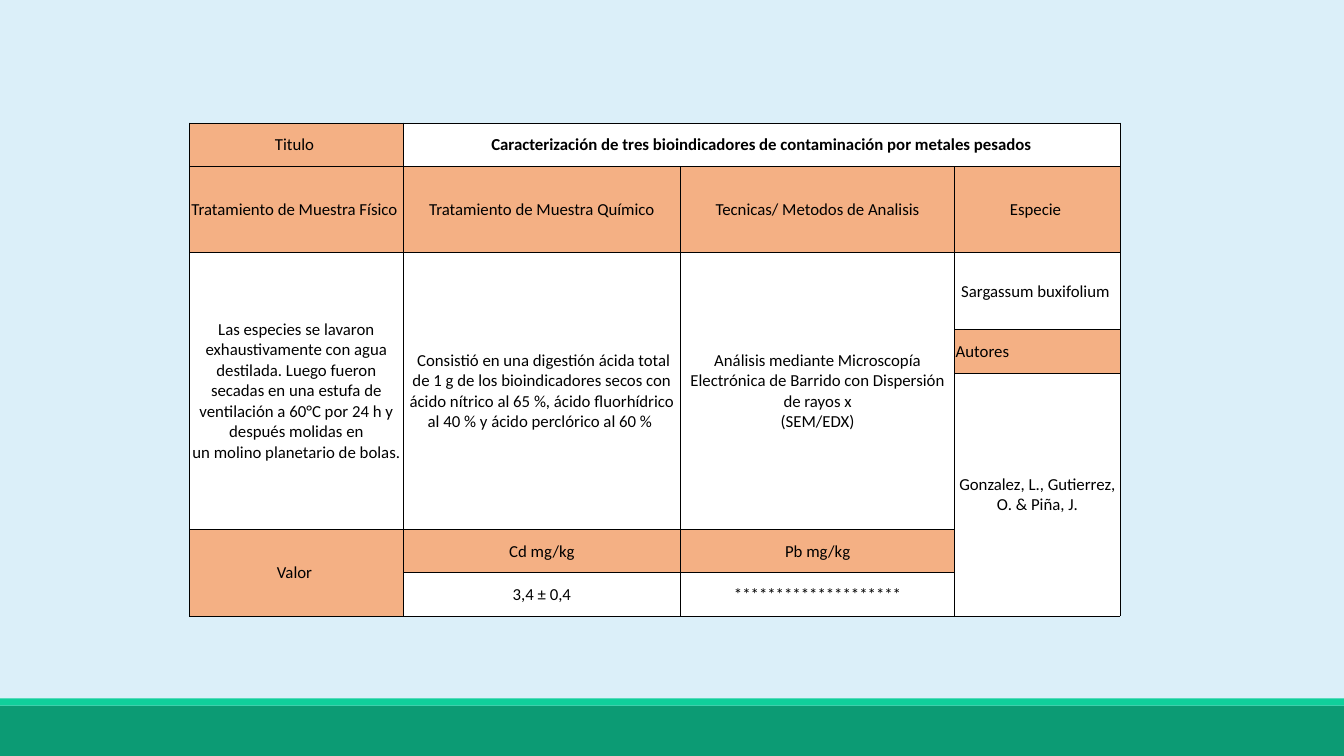
from lxml.etree import SubElement
from pptx import Presentation
from pptx.dml.color import RGBColor
from pptx.enum.shapes import MSO_SHAPE
from pptx.enum.text import MSO_ANCHOR, PP_ALIGN
from pptx.oxml.ns import qn
from pptx.util import Inches, Pt

SKY = RGBColor(0xDB, 0xEF, 0xF9)
GREEN = RGBColor(0x0C, 0x9B, 0x74)
MINT = RGBColor(0x10, 0xCF, 0x9B)
ORANGE = RGBColor(0xF4, 0xB0, 0x84)
WHITE = RGBColor(0xFF, 0xFF, 0xFF)
BLACK = RGBColor(0, 0, 0)


def add_borders(cell):
    """Give the cell a thin black line on all four sides."""
    properties = cell._tc.get_or_add_tcPr()
    for position, side in enumerate(("lnL", "lnR", "lnT", "lnB")):
        line = SubElement(properties, qn(f"a:{side}"), w=str(Pt(0.5)))
        fill = SubElement(line, qn("a:solidFill"))
        SubElement(fill, qn("a:srgbClr"), val=str(BLACK))
        properties.insert(position, line)


def write_cell(cell, text, bold=False, align=PP_ALIGN.CENTER):
    cell.vertical_anchor = MSO_ANCHOR.MIDDLE
    cell.margin_left = cell.margin_right = cell.margin_top = Inches(0.01)
    cell.margin_bottom = 0
    para = cell.text_frame.paragraphs[0]
    para.text = text
    para.alignment = align
    for span in para.runs:
        span.font.name = "Calibri"
        span.font.size = Pt(12)
        span.font.bold = bold
        span.font.color.rgb = BLACK
    for line_break in para._p.findall(qn("a:br")):
        SubElement(line_break, qn("a:rPr"), sz="1200")


deck = Presentation()
deck.slide_width = Inches(13.33)
deck.slide_height = Inches(7.5)
page = deck.slides.add_slide(deck.slide_layouts[6])
page.background.fill.solid()
page.background.fill.fore_color.rgb = SKY

for top, height, color in ((7, 0.5, GREEN), (6.93, 0.07, MINT)):
    band = page.shapes.add_shape(
        MSO_SHAPE.RECTANGLE, 0, Inches(top), deck.slide_width, Inches(height))
    band.shadow.inherit = False
    band.fill.solid()
    band.fill.fore_color.rgb = color
    band.line.fill.background()

column_widths = (2.12, 2.75, 2.72, 1.64)
row_heights = (0.43, 0.85, 0.77, 0.43, 1.55, 0.43, 0.43)
table = page.shapes.add_table(
    len(row_heights), len(column_widths), Inches(1.88), Inches(1.22),
    Inches(sum(column_widths)), Inches(sum(row_heights))).table
for column, width in zip(table.columns, column_widths):
    column.width = Inches(width)
for row, height in zip(table.rows, row_heights):
    row.height = Inches(height)

headings = {
    (0, 0): "Titulo ",
    (1, 0): "Tratamiento de Muestra Físico ",
    (1, 1): "Tratamiento de Muestra Químico",
    (1, 2): "Tecnicas/ Metodos de Analisis",
    (1, 3): "Especie ",
    (3, 3): "Autores",
    (5, 0): "Valor ",
    (5, 1): "Cd mg/kg",
    (5, 2): "Pb mg/kg",
}
details = {
    (0, 1): "Caracterización de tres bioindicadores de contaminación por metales pesados",
    (2, 0): "Las especies se lavaron exhaustivamente con agua destilada. "
            "Luego fueron secadas en una estufa de\n"
            "ventilación a 60°C por 24 h y después molidas en\n"
            "un molino planetario de bolas.",
    (2, 1): " Consistió en una digestión ácida total de 1 g de los "
            "bioindicadores secos con\n"
            "ácido nítrico al 65 %, ácido fluorhídrico al 40 % "
            "y ácido perclórico al 60 % ",
    (2, 2): "Análisis mediante Microscopía Electrónica de Barrido "
            "con Dispersión de rayos x\n(SEM/EDX)",
    (2, 3): "Sargassum buxifolium ",
    (4, 3): "Gonzalez, L., Gutierrez, O. & Piña, J.",
    (6, 1): "3,4 ± 0,4",
    (6, 2): "********************",
}
merges = (
    ((0, 1), (0, 3)),
    ((2, 0), (4, 0)),
    ((2, 1), (4, 1)),
    ((2, 2), (4, 2)),
    ((4, 3), (6, 3)),
    ((5, 0), (6, 0)),
)

for first, last in merges:
    table.cell(*first).merge(table.cell(*last))

for cell in table.iter_cells():
    cell.fill.solid()
    cell.fill.fore_color.rgb = WHITE
    add_borders(cell)

for place, text in headings.items():
    cell = table.cell(*place)
    cell.fill.fore_color.rgb = ORANGE
    write_cell(cell, text,
               align=PP_ALIGN.LEFT if text == "Autores" else PP_ALIGN.CENTER)
for place, text in details.items():
    write_cell(table.cell(*place), text, bold=place == (0, 1))

deck.save("out.pptx")
